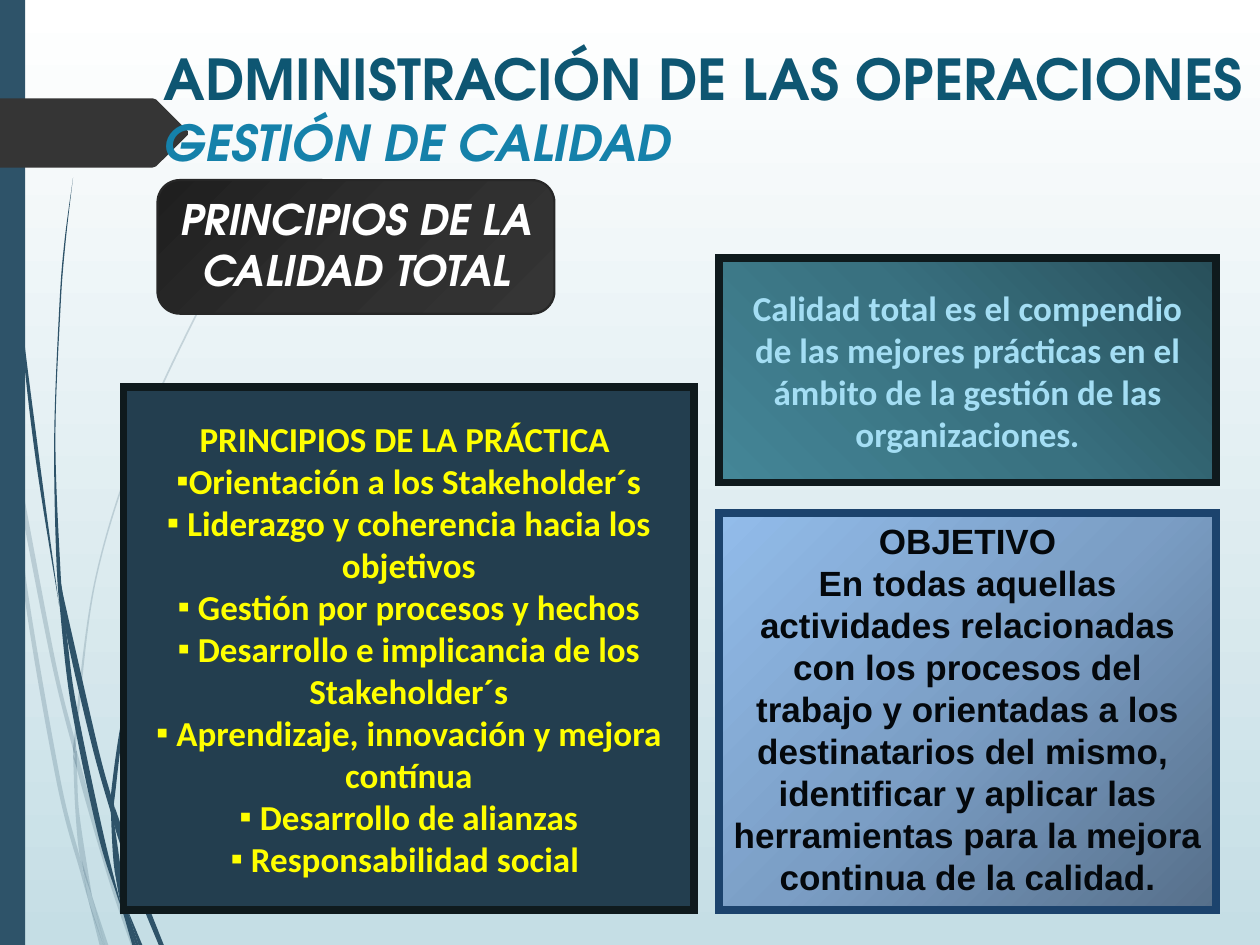
from lxml import etree
from pptx import Presentation
from pptx.dml.color import RGBColor
from pptx.enum.shapes import MSO_SHAPE
from pptx.enum.text import MSO_ANCHOR, MSO_AUTO_SIZE, PP_ALIGN
from pptx.oxml.ns import qn
from pptx.util import Inches, Pt

RECT, ROUND = MSO_SHAPE.RECTANGLE, MSO_SHAPE.ROUNDED_RECTANGLE
TOP, MID = MSO_ANCHOR.TOP, MSO_ANCHOR.MIDDLE
LEFT, CENTER = PP_ALIGN.LEFT, PP_ALIGN.CENTER
FIXED = MSO_AUTO_SIZE.NONE

# Content
TITLE = "ADMINISTRACIÓN DE LAS OPERACIONES"
TOPIC = "GESTIÓN DE CALIDAD"
LABEL = "PRINCIPIOS DE LA CALIDAD TOTAL"
QUOTE = ("Calidad total es el compendio de las mejores prácticas en el ámbito "
         "de la gestión de las organizaciones")
RULES = [
    "PRINCIPIOS DE LA PRÁCTICA ",
    "Orientación a los Stakeholder´s",
    " Liderazgo y coherencia hacia los objetivos",
    " Gestión por procesos y hechos",
    " Desarrollo e implicancia de los Stakeholder´s",
    " Aprendizaje, innovación y mejora contínua",
    " Desarrollo de alianzas",
    " Responsabilidad social ",
]
GOAL = [
    "OBJETIVO",
    "En todas aquellas actividades relacionadas con los procesos del trabajo y "
    "orientadas a los destinatarios del mismo,  identificar y aplicar las "
    "herramientas para la mejora continua de la calidad.",
]

# Theme
THEME = {
    "sky": ["FFFFFF", "C5DEE5"], "stem": "2E5369", "tab": "353535",
    "label": ["1F1F1F", "2D2D2D", "353535"], "label_line": "272727",
    "teal": ["284F5A", "397180", "448697"], "navy": "233E4F", "frame": "0F1A1D",
    "blue": ["566F8A", "7B9EC5", "92BCEA"], "blue_line": "1C436D",
    "head": {"font": "TeX Gyre Adventor", "size": 32.2, "color": "0E5672"},
    "topic": {"font": "TeX Gyre Adventor", "size": 28.3, "color": "1581AA", "italic": True},
    "tag": {"font": "TeX Gyre Adventor", "size": 24, "color": "FFFFFF", "italic": True},
    "quote": {"font": "Calibri", "size": 20, "color": "A4DEF4"},
    "rules": {"font": "Calibri", "size": 20, "color": "FFFF00"},
    "goal": {"font": "Arial", "size": 20, "color": "04080C"},
}

# Grass blades: left edge and right edge, each from top to bottom
PALE = [
    ([(0, 2.82), (0, 2.99), (.07, 3.44), (.08, 3.5)], [(0, 2.82), (.06, 3.22), (.08, 3.5)]),
    ([(.1, 3.45), (.12, 3.76), (.4, 5.22), (.59, 5.99)], [(.1, 3.45), (.43, 5.2), (.59, 5.86)]),
    ([(.61, 5.96), (.61, 6.1), (.85, 6.94), (1.04, 7.5)],
     [(.61, 5.96), (.64, 6.07), (.88, 6.92), (1.08, 7.5)]),
    ([(.73, 7.11), (.83, 7.5)], [(.73, 7.11), (.86, 7.5)]),
    ([(.08, 3.5), (.19, 4.7), (.45, 6.21), (.64, 6.93), (.7, 7.14)],
     [(.08, 3.5), (.12, 3.76), (.22, 4.69), (.48, 6.19), (.64, 6.83), (.7, 7.14)]),
    ([(.58, 5.99), (.6, 6.46), (.64, 6.83), (.73, 7.11)],
     [(.58, 5.99), (.61, 6.1), (.63, 6.46), (.73, 7.11)]),
    ([(2.17, 1.53), (1.86, 1.97), (1.58, 2.44), (1.1, 3.48), (.75, 4.61), (.59, 5.84), (.61, 5.96)],
     [(2.17, 1.53), (1.87, 1.98), (1.59, 2.45), (1.11, 3.49), (.76, 4.62), (.61, 5.84), (.61, 5.96)]),
    ([(.7, 7.14), (.79, 7.5)], [(.7, 7.14), (.82, 7.5)]),
    ([(.59, 5.86), (.58, 5.99), (.61, 6.1)], [(.59, 5.86), (.61, 5.96), (.61, 6.1)]),
    ([(.65, 6.83), (.7, 7.14), (.82, 7.5)], [(.65, 6.83), (.73, 7.11), (.83, 7.5)]),
]
DARK = [
    ([(.02, 0), (.03, .48), (.05, 1.1), (.14, 2.33), (.27, 3.55), (.47, 4.81)],
     [(.03, 0), (.04, .48), (.06, 1.09), (.15, 2.32), (.3, 3.55), (.47, 4.81)]),
    ([(.5, 4.72), (.53, 5.05), (.73, 5.92), (.88, 6.45)], [(.5, 4.72), (.77, 5.9), (.88, 6.31)]),
    ([(.91, 6.41), (.91, 6.56), (1.09, 7.08), (1.26, 7.5)],
     [(.91, 6.41), (.94, 6.49), (1.13, 7.06), (1.3, 7.5)]),
    ([(.47, 4.77), (.56, 5.57), (.77, 6.59), (.92, 7.08), (.97, 7.22)],
     [(.47, 4.77), (.53, 5.05), (.6, 5.56), (.81, 6.57), (.97, 7.22)]),
    ([(.58, 1.41), (.51, 1.93), (.47, 2.45), (.43, 3.49), (.45, 4.49), (.49, 4.72)],
     [(.58, 1.41), (.52, 1.93), (.48, 2.45), (.44, 3.49), (.48, 4.53), (.5, 4.72)]),
    ([(1, 7.19), (1.1, 7.5)], [(1, 7.19), (1.13, 7.5)]),
    ([(.45, 4.49), (.47, 4.77), (.53, 5.05)], [(.45, 4.49), (.5, 4.72), (.53, 5.05)]),
    ([(2.15, 3.44), (1.68, 4.05), (1.29, 4.74), (1.01, 5.51), (.88, 6.31), (.91, 6.41)],
     [(2.16, 3.44), (1.69, 4.06), (1.31, 4.76), (1.03, 5.52), (.91, 6.33), (.91, 6.41)]),
    ([(.97, 7.22), (1.05, 7.5)], [(.97, 7.22), (1.08, 7.5)]),
    ([(.88, 6.45), (.91, 6.91), (1, 7.19)], [(.88, 6.45), (.91, 6.56), (1, 7.19)]),
    ([(.88, 6.31), (.88, 6.45), (.91, 6.56)], [(.88, 6.31), (.91, 6.41), (.91, 6.56)]),
    ([(.91, 6.91), (.97, 7.22), (1.08, 7.5)], [(.91, 6.91), (1, 7.19), (1.1, 7.5)]),
]
TAB = [(0, .78), (1.21, .78), (1.24, .79), (1.49, 1.04), (1.49, 1.07),
       (1.24, 1.32), (1.21, 1.33), (0, 1.33)]

# Grid: two columns that share a bottom edge
WIDE, HIGH = 10, 7.5
BASE = 7.22
COL1, COL2 = (.98, 4.53), (5.71, 3.94)

deck = Presentation()
deck.slide_width, deck.slide_height = Inches(WIDE), Inches(HIGH)
slide = deck.slides.add_slide(deck.slide_layouts[1])
shapes = slide.shapes


def blend(fill, root, colors, angle=None):
    """Gradient with even stops; no angle means rings from the top right corner."""
    fill.gradient()
    grad = root.find(".//" + qn("a:gradFill"))
    for part in list(grad):
        grad.remove(part)
    stops = etree.SubElement(grad, qn("a:gsLst"))
    for i, color in enumerate(colors):
        stop = etree.SubElement(stops, qn("a:gs"), pos=str(100000 * i // (len(colors) - 1)))
        etree.SubElement(stop, qn("a:srgbClr"), val=color)
    if angle is None:
        ring = etree.SubElement(grad, qn("a:path"), path="circle")
        etree.SubElement(ring, qn("a:fillToRect"), l="100000", b="100000")
    else:
        etree.SubElement(grad, qn("a:lin"), ang=str(angle * 60000), scaled="0")


def paint(shape, fill, angle=None, line=None, width=4.5, alpha=None):
    if isinstance(fill, list):
        blend(shape.fill, shape._element, fill, angle)
    else:
        shape.fill.solid()
        shape.fill.fore_color.rgb = RGBColor.from_string(fill)
    if alpha:
        tint = shape._element.spPr.find(qn("a:solidFill"))[0]
        etree.SubElement(tint, qn("a:alpha"), val=str(alpha * 1000))
    if line:
        shape.line.color.rgb = RGBColor.from_string(line)
        shape.line.width = Pt(width)
        etree.SubElement(shape._element.spPr.find(qn("a:ln")), qn("a:miter"), lim="800000")
    else:
        shape.line.fill.background()


def box(kind, x, y, w, h, **look):
    shape = shapes.add_shape(kind, *map(Inches, (x, y, w, h)))
    shape.shadow.inherit = False
    paint(shape, **look)
    return shape


def place(holder, x, y, w, h):
    holder.left, holder.top, holder.width, holder.height = map(Inches, (x, y, w, h))
    shapes._spTree.append(holder._element)  # bring to the front
    return holder


def outline(points, **look):
    dots = [(Inches(x), Inches(y)) for x, y in points]
    pen = shapes.build_freeform(*dots[0])
    pen.add_line_segments(dots[1:], close=True)
    shape = pen.convert_to_shape()
    shape.shadow.inherit = False
    paint(shape, **look)
    return shape


def blade(near, far, **look):
    """Closed outline whose two edges bend smoothly through their points."""
    back = far[::-1]
    shape = outline(near + back[back[0] == near[-1]:], **look)
    lines = iter(shape._element.findall(".//" + qn("a:lnTo")))
    for edge in (near, back):
        ext = [edge[0], *edge, edge[-1]]
        for a, b, c, d in zip(ext, ext[1:], ext[2:], ext[3:]):
            line = next(lines, None)
            if line is None or len(edge) == 2:
                continue
            bend = etree.Element(qn("a:cubicBezTo"))
            for x, y in ([q + (r - p) / 6 for p, q, r in zip(a, b, c)],
                         [q - (r - p) / 6 for p, q, r in zip(b, c, d)], c):
                etree.SubElement(bend, qn("a:pt"), x=str(Inches(x) - shape.left),
                                 y=str(Inches(y) - shape.top))
            line.getparent().replace(line, bend)
        if edge is near and back[0] != near[-1]:
            next(lines)  # flat foot


def write(para, text, font, size, color, italic=False, align=CENTER):
    para.alignment = align
    para.space_before = para.space_after = Pt(0)
    run = para.add_run()
    run.text = text
    run.font.name, run.font.size = font, Pt(size)
    run.font.bold, run.font.italic = True, italic
    run.font.color.rgb = RGBColor.from_string(color)


def paras(shape, count, anchor):
    frame = shape.text_frame
    frame.word_wrap, frame.auto_size, frame.vertical_anchor = True, FIXED, anchor
    return [frame.paragraphs[0]] + [frame.add_paragraph() for _ in range(count - 1)]


# Backdrop
blend(slide.background.fill, slide._element, THEME["sky"], 90)
for blades, alpha in ((PALE, 20), (DARK, None)):
    for near, far in blades:
        blade(near, far, fill=THEME["stem"], alpha=alpha)
box(RECT, 0, 0, .02 * WIDE, HIGH, fill=THEME["stem"])
outline(TAB, fill=THEME["tab"])

# Label
box(ROUND, 1.25, 1.43, 3.15, 1.06, fill=THEME["label"], angle=45,
    line=THEME["label_line"], width=1.25)
tag = shapes.add_textbox(*map(Inches, (1.33, 1.49, 3, .91)))
write(paras(tag, 1, TOP)[0], LABEL, **THEME["tag"])

# Quote
quote = box(RECT, COL2[0], 2.05, COL2[1], 1.78, fill=THEME["teal"], line=THEME["frame"])
para = paras(quote, 1, MID)[0]
write(para, QUOTE, **THEME["quote"])
write(para, ".", italic=True, **THEME["quote"])

# Principles
body = place(slide.placeholders[1], COL1[0], 3.07, COL1[1], BASE - 3.07)
paint(body, THEME["navy"], line=THEME["frame"])
for i, (para, text) in enumerate(zip(paras(body, len(RULES), MID), RULES)):
    write(para, text, **THEME["rules"])
    para.level = 2
    props = para._p.get_or_add_pPr()
    props.set("marL", "0")
    props.set("indent", "0")
    if i:
        etree.SubElement(props, qn("a:buChar"), char="▪")
    else:
        etree.SubElement(props, qn("a:buNone"))

# Objective
goal = box(RECT, COL2[0], 4.07, COL2[1], BASE - 4.07, fill=THEME["blue"], angle=225,
           line=THEME["blue_line"])
for para, text in zip(paras(goal, len(GOAL), TOP), GOAL):
    write(para, text, **THEME["goal"])

# Title
head = place(shapes.title, 1.2, .3, 8.92, 1.4)
para = paras(head, 1, TOP)[0]
write(para, TITLE, align=LEFT, **THEME["head"])
para.add_line_break()
write(para, TOPIC, align=LEFT, **THEME["topic"])

deck.save("out.pptx")
